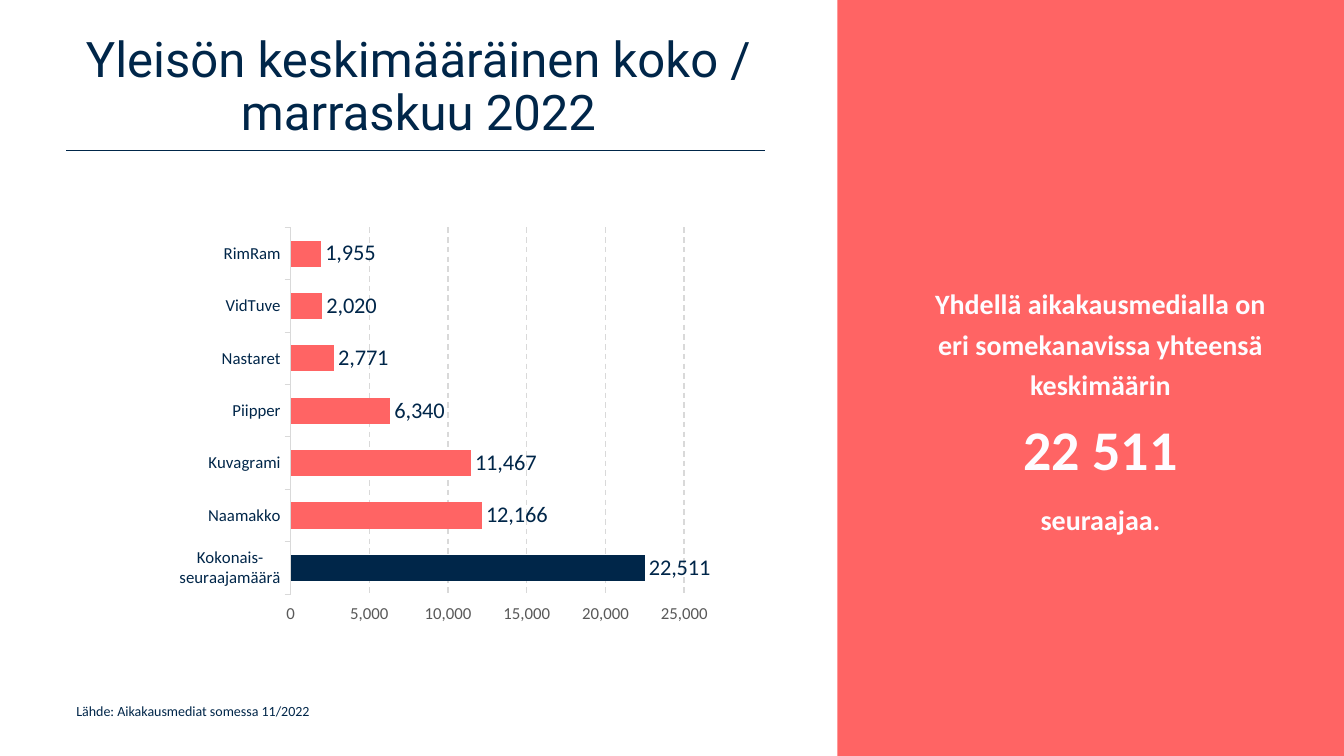
import pptx
import pptx.chart.data
import pptx.dml.color
import pptx.enum.chart
import pptx.enum.dml
import pptx.enum.shapes
import pptx.enum.text
import pptx.oxml
import pptx.oxml.ns
import pptx.util
from lxml import etree

Pt = pptx.util.Pt
ALIGN = pptx.enum.text.PP_ALIGN
ANCHOR = pptx.enum.text.MSO_ANCHOR

THEME = {
    "coral": pptx.dml.color.RGBColor.from_string("FF6464"),
    "navy": pptx.dml.color.RGBColor.from_string("002649"),
    "light": pptx.dml.color.RGBColor.from_string("FEFCFF"),
    "grid": pptx.dml.color.RGBColor.from_string("D9D9D9"),
    "grey": pptx.dml.color.RGBColor.from_string("595959"),
    "heading": "Roboto",
    "body": "Calibri",
    "title_size": 35,
    "figure_size": 40,
    "message_size": 20,
    "value_size": 16,
    "axis_size": 12,
    "source_size": 10,
}

deck = pptx.Presentation()
deck.slide_width = pptx.util.Inches(13.33)
deck.slide_height = pptx.util.Inches(7.5)
page = deck.slides.add_slide(deck.slide_layouts[6])

COLUMNS, ROWS = 160, 90
PANEL_LEFT = 99.7
RULE_LEFT, RULE_RIGHT, RULE_TOP = 7.9, 91.1, 17.9


def grid(*lengths):
    """Turn alternating column and row counts into slide lengths."""
    units = (deck.slide_width / COLUMNS, deck.slide_height / ROWS)
    return [round(length * units[i % 2]) for i, length in enumerate(lengths)]


def add_text(paragraphs, place, color, font="body", align=ALIGN.CENTER,
             anchor=ANCHOR.MIDDLE, bold=False, spacing=1.0, gap=0):
    """Add a text box; each paragraph is a list of (line, size) pairs."""
    frame = page.shapes.add_textbox(*grid(*place)).text_frame
    frame.word_wrap = True
    frame.vertical_anchor = anchor
    for index, lines in enumerate(paragraphs):
        para = frame.add_paragraph() if index else frame.paragraphs[0]
        para.alignment = align
        para.line_spacing = spacing
        para.space_before = Pt(gap if index else 0)
        for number, (line, size) in enumerate(lines):
            if number:
                para.add_line_break()
            span = para.add_run()
            span.text = line
            span.font.name = THEME[font]
            span.font.size = Pt(THEME[size])
            span.font.bold = bold
            span.font.color.rgb = THEME[color]


# Coral panel and title rule
panel = page.shapes.add_shape(
    pptx.enum.shapes.MSO_SHAPE.RECTANGLE,
    *grid(PANEL_LEFT, 0, COLUMNS - PANEL_LEFT, ROWS))
panel.shadow.inherit = False
panel.fill.solid()
panel.fill.fore_color.rgb = THEME["coral"]
panel.line.fill.background()

rule = page.shapes.add_connector(
    pptx.enum.shapes.MSO_CONNECTOR.STRAIGHT,
    *grid(RULE_LEFT, RULE_TOP, RULE_RIGHT, RULE_TOP))
rule.line.color.rgb = THEME["navy"]
rule.line.width = Pt(1)
etree.SubElement(rule.element.spPr, pptx.oxml.ns.qn("a:effectLst"))

# Texts
add_text([[("Lähde: Aikakausmediat somessa 11/2022", "source_size")]],
         (RULE_LEFT, 83, 79, 5.3), "navy", align=ALIGN.LEFT, anchor=ANCHOR.TOP)
add_text([[("Yleisön keskimääräinen koko /", "title_size"),
           ("marraskuu 2022", "title_size")]],
         (0, 3, PANEL_LEFT, 15), "navy", font="heading", spacing=0.9)
add_text([[("Yhdellä aikakausmedialla on eri somekanavissa yhteensä keskimäärin",
            "message_size"),
           ("22 511", "figure_size")],
          [("seuraajaa.", "message_size")]],
         (108.5, 18, 45, 61.2), "light", bold=True, spacing=1.2, gap=10)

# Followers by channel
followers = {
    "Kokonais-\nseuraajamäärä": 22511,
    "Naamakko": 12166,
    "Kuvagrami": 11467,
    "Piipper": 6340,
    "Nastaret": 2771,
    "VidTuve": 2020,
    "RimRam": 1955,
}
data = pptx.chart.data.CategoryChartData(number_format="#,##0")
data.categories = list(followers)
data.add_series("Seuraajat", list(followers.values()))
chart = page.shapes.add_chart(
    pptx.enum.chart.XL_CHART_TYPE.BAR_CLUSTERED,
    *grid(0, 22.6, PANEL_LEFT, 52.1), data).chart
chart.has_legend = False
chart.has_title = False
chart.font.name = THEME["body"]
chart.font.size = Pt(THEME["axis_size"])

plot = chart.plots[0]
plot.gap_width = 100
plot.vary_by_categories = False
series = plot.series[0]
total = series.points[0]
for bars, color in ((series, "coral"), (total, "navy")):
    bars.format.fill.solid()
    bars.format.fill.fore_color.rgb = THEME[color]

plot.has_data_labels = True
labels = plot.data_labels
labels.show_value = True
labels.position = pptx.enum.chart.XL_LABEL_POSITION.OUTSIDE_END
labels.number_format = "#,##0"
labels.number_format_is_linked = False

names, scale = chart.category_axis, chart.value_axis
for part, size, color in ((labels, "value_size", "navy"),
                          (names.tick_labels, "axis_size", "navy"),
                          (scale.tick_labels, "axis_size", "grey")):
    part.font.name = THEME["body"]
    part.font.size = Pt(THEME[size])
    part.font.color.rgb = THEME[color]

for axis in (names, scale):
    axis.major_tick_mark = pptx.enum.chart.XL_TICK_MARK.OUTSIDE
    axis.minor_tick_mark = pptx.enum.chart.XL_TICK_MARK.NONE
names.format.line.color.rgb = THEME["grid"]
names.format.line.width = Pt(0.75)
scale.format.line.fill.background()
scale.minimum_scale, scale.maximum_scale, scale.major_unit = 0, 25000, 5000
scale.tick_labels.number_format = "#,##0"
scale.tick_labels.number_format_is_linked = False
scale.has_major_gridlines = True
gridline = scale.major_gridlines.format.line
gridline.color.rgb = THEME["grid"]
gridline.width = Pt(1)
gridline.dash_style = pptx.enum.dml.MSO_LINE.DASH

# Fixed plot area, as shares of the chart
plot_area = chart.element.chart.plotArea
for old_layout in plot_area.findall(pptx.oxml.ns.qn("c:layout")):
    plot_area.remove(old_layout)
layout = pptx.oxml.parse_xml(
    f'<c:layout {pptx.oxml.ns.nsdecls("c")}><c:manualLayout/></c:layout>')
settings = (("layoutTarget", "inner"), ("xMode", "edge"), ("yMode", "edge"),
            ("x", 0.347), ("y", 0.086), ("w", 0.47), ("h", 0.838))
for tag, value in settings:
    etree.SubElement(layout[0], pptx.oxml.ns.qn(f"c:{tag}")).set("val", str(value))
plot_area.insert(0, layout)

deck.save("out.pptx")
